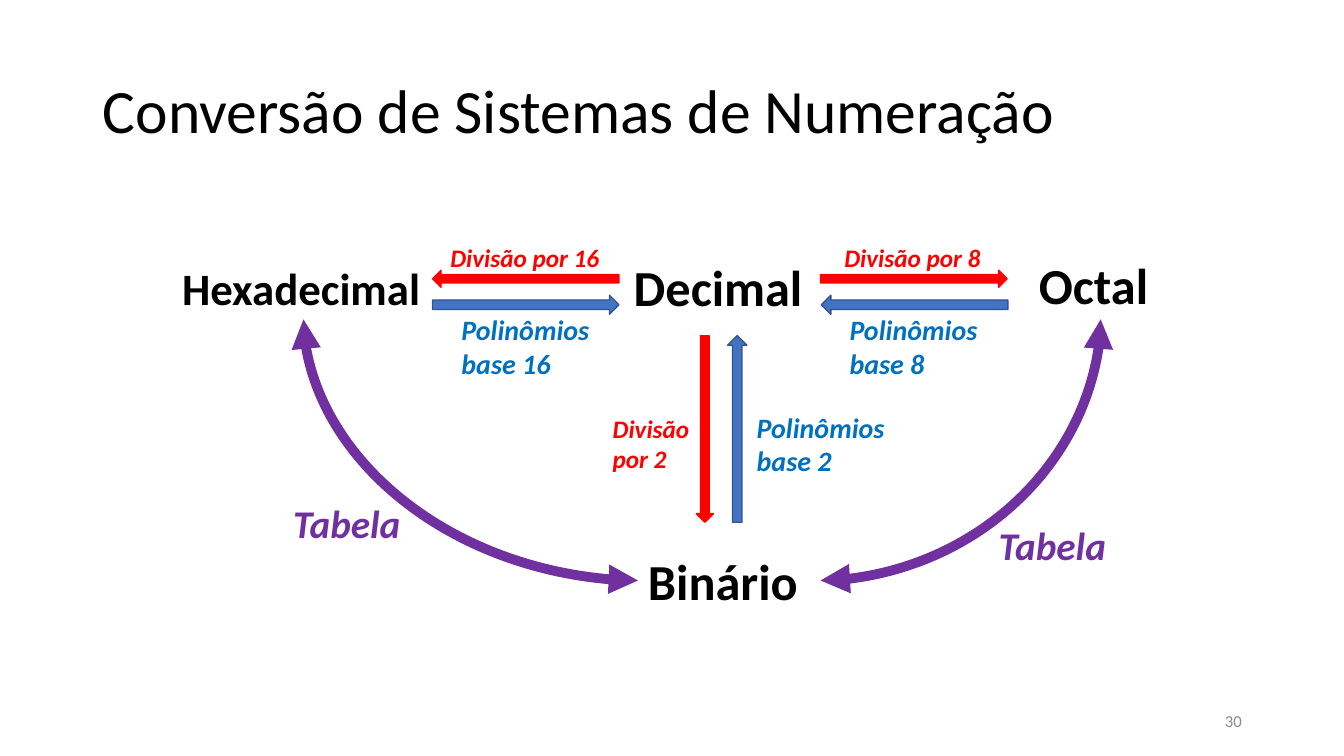
from lxml.etree import SubElement
from pptx import Presentation
from pptx.dml.color import RGBColor
from pptx.enum.shapes import MSO_CONNECTOR as Link, MSO_SHAPE as Shape
from pptx.enum.text import MSO_ANCHOR as Anchor, MSO_AUTO_SIZE as Fit, PP_ALIGN as Align
from pptx.oxml.ns import qn
from pptx.util import Cm, Pt

BLACK, RED, BLUE, PURPLE, GRAY = "000000", "FF0000", "0070C0", "7030A0", "8C8C8C"
ARROW_BLUE, ARROW_EDGE = "4472C4", "325491"
ARROW_LENGTH = 4.7

BASE = {"size": 36, "bold": True, "italic": False, "color": BLACK}
SMALL_BASE = {**BASE, "size": 32}
DIVISION = {"size": 18, "bold": True, "italic": True, "color": RED}
POLYNOMIAL = {"size": 20, "bold": True, "italic": True, "color": BLUE}
TABLE = {"size": 28, "bold": True, "italic": True, "color": PURPLE}
TITLE = {"size": 44, "bold": False, "italic": False, "color": BLACK}
NUMBER = {"size": 12, "bold": False, "italic": False, "color": GRAY}

LABELS = [
    ("Hexadecimal", (4.34, 6.45, 6.6, 1.63), SMALL_BASE, False),
    ("Decimal", (15.72, 6.32, 5.11, 1.8), BASE, False),
    ("Binário", (16.08, 13.74, 4.62, 1.8), BASE, False),
    ("Octal", (25.93, 6.27, 3.61, 1.8), BASE, False),
    ("Divisão por 16", (11.1, 5.97, 4.32, 1.02), DIVISION, False),
    ("Divisão por 8", (21.03, 5.97, 3.99, 1.02), DIVISION, False),
    ("Divisão por 2", (15.19, 10.29, 2.46, 1.8), DIVISION, True),
    ("Polinômios base 16", (11.38, 7.75, 3.86, 1.96), POLYNOMIAL, True),
    ("Polinômios base 8", (21.16, 7.75, 4.22, 1.96), POLYNOMIAL, True),
    ("Polinômios base 2", (18.82, 10.21, 4.37, 1.96), POLYNOMIAL, True),
    ("Tabela", (7.14, 12.45, 3.33, 1.45), TABLE, False),
    ("Tabela", (24.92, 13, 3.33, 1.45), TABLE, False),
]

DIVISION_ARROWS = [
    (Shape.LEFT_ARROW, 10.9, 6.81),
    (Shape.RIGHT_ARROW, 20.68, 6.81),
    (Shape.DOWN_ARROW, 17.55, 8.46),
]
POLYNOMIAL_ARROWS = [
    (Shape.RIGHT_ARROW, 10.9, 7.44),
    (Shape.LEFT_ARROW, 20.7, 7.44),
    (Shape.UP_ARROW, 18.34, 8.46),
]
TABLE_CURVES = [
    ((16.08, 14.63), (7.65, 8.05)),
    ((20.68, 14.63), (27.74, 8.05)),
]


def paint(color_format, value):
    color_format.rgb = RGBColor.from_string(value)


def write(box, text, style):
    para = box.text_frame.paragraphs[0]
    span = para.add_run()
    span.text = text
    font_values = {"name": "Calibri", "size": Pt(style["size"]),
                   "bold": style["bold"], "italic": style["italic"]}
    for name, value in font_values.items():
        setattr(span.font, name, value)
    paint(span.font.color, style["color"])
    return para


def add_title(page, text):
    box = page.shapes.title
    place = {"left": 2.34, "top": 1.02, "width": 29.21, "height": 3.68}
    for name, value in place.items():
        setattr(box, name, Cm(value))
    box.text_frame.vertical_anchor = Anchor.MIDDLE
    para = write(box, text, TITLE)
    para.alignment = Align.LEFT
    para.line_spacing = 0.9


def add_label(page, text, place, style, wrap):
    box = page.shapes.add_textbox(*map(Cm, place))
    box.text_frame.word_wrap = wrap
    box.text_frame.auto_size = Fit.SHAPE_TO_FIT_TEXT
    write(box, text, style)


def add_page_number(page, text):
    box = page.shapes.add_textbox(Cm(23.93), Cm(17.65), Cm(7.62), Cm(1.02))
    box.text_frame.word_wrap = True
    box.text_frame.vertical_anchor = Anchor.MIDDLE
    write(box, text, NUMBER).alignment = Align.RIGHT


def add_arrow(page, kind, left, top, thickness, fill, edge):
    size = (ARROW_LENGTH, thickness)
    if kind in (Shape.UP_ARROW, Shape.DOWN_ARROW):
        size = size[::-1]
    arrow = page.shapes.add_shape(kind, *map(Cm, (left, top, *size)))
    arrow.shadow.inherit = False
    arrow.fill.solid()
    paint(arrow.fill.fore_color, fill)
    paint(arrow.line.color, edge)
    arrow.line.width = Pt(1)


def add_curve(page, start, end):
    curve = page.shapes.add_connector(Link.CURVE, *map(Cm, start + end))
    paint(curve.line.color, PURPLE)
    curve.line.width = Pt(7)
    properties = curve._element.spPr
    properties.find(qn("a:prstGeom")).set("prst", "curvedConnector2")
    line = properties.find(qn("a:ln"))
    for tip in ("a:headEnd", "a:tailEnd"):
        SubElement(line, qn(tip), type="triangle")
    SubElement(properties, qn("a:effectLst"))


def main():
    deck = Presentation()
    deck.slide_width, deck.slide_height = Cm(33.87), Cm(19.05)
    page = deck.slides.add_slide(deck.slide_layouts[5])
    add_title(page, "Conversão de Sistemas de Numeração")
    for arrow in DIVISION_ARROWS:
        add_arrow(page, *arrow, 0.43, RED, RED)
    for arrow in POLYNOMIAL_ARROWS:
        add_arrow(page, *arrow, 0.48, ARROW_BLUE, ARROW_EDGE)
    for start, end in TABLE_CURVES:
        add_curve(page, start, end)
    for label in LABELS:
        add_label(page, *label)
    add_page_number(page, "30")
    deck.save("out.pptx")


if __name__ == "__main__":
    main()
